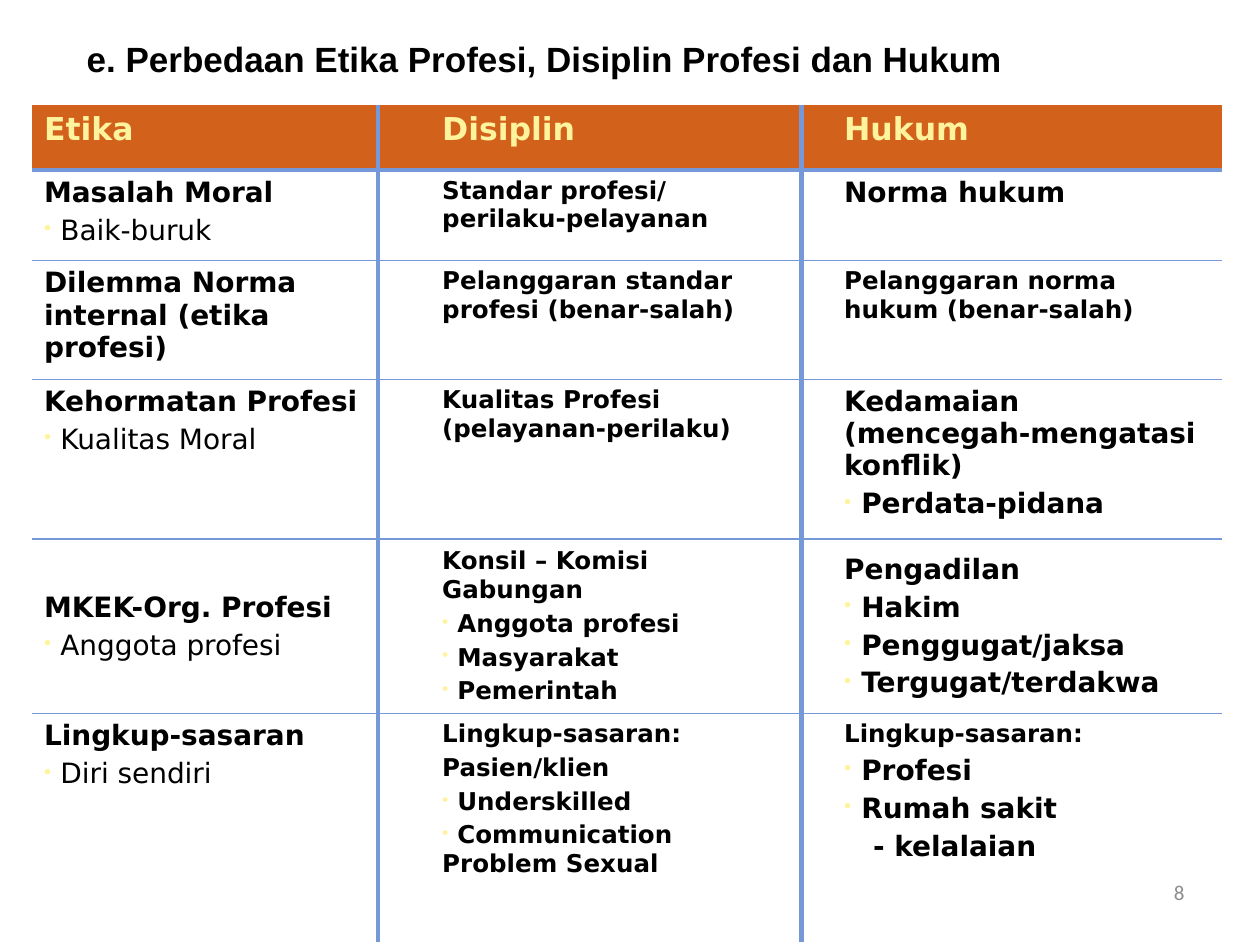
from collections import namedtuple

from lxml import etree
from pptx import Presentation
from pptx.dml.color import RGBColor
from pptx.enum.text import MSO_ANCHOR, PP_ALIGN
from pptx.oxml.ns import qn
from pptx.util import Inches, Pt

TOP, MIDDLE = MSO_ANCHOR.TOP, MSO_ANCHOR.MIDDLE
LEFT, RIGHT = PP_ALIGN.LEFT, PP_ALIGN.RIGHT

WIDTH, HEIGHT = 10, 7.5
BLACK, GREY = "000000", "8C8C8C"
ORANGE, YELLOW, BLUE = "D2611C", "FFF39D", "7598D9"
TABLE_FONT = "DejaVu Sans"

COLUMNS = [2.75, 0.41, 2.95, 0.24, 3.1]
ROWS = [0.52, 0.72, 0.94, 1.27, 1.38, 1.81]
TEXT_COLUMNS = (0, 2, 4)
RULED_COLUMNS = (0, 2)
RULE_WIDTHS = [3, 1, 0.5, 1, 1]
MIDDLE_ROW = 4

Line = namedtuple("Line", "text size bold bullet indent color",
                  defaults=(16, True, False, 0, BLACK))


def heading(text):
    return Line(text, size=18, color=YELLOW)


def small(text):
    return Line(text, size=14)


def item(text, size=16, bold=True):
    """A bulleted line, one space away from its bullet."""
    return Line(" " + text, size, bold, bullet=True)


CONTENT = [
    [[heading("Etika")], [heading("Disiplin")], [heading("Hukum")]],
    [[Line("Masalah Moral"), item("Baik-buruk", bold=False)],
     [small("Standar profesi/ perilaku-pelayanan")],
     [Line("Norma hukum")]],
    [[Line("Dilemma Norma internal (etika profesi)")],
     [small("Pelanggaran standar profesi (benar-salah)")],
     [small("Pelanggaran norma hukum (benar-salah)")]],
    [[Line("Kehormatan Profesi"), item("Kualitas Moral", bold=False)],
     [small("Kualitas Profesi (pelayanan-perilaku)")],
     [Line("Kedamaian (mencegah-mengatasi konflik)"), item("Perdata-pidana")]],
    [[Line("MKEK-Org. Profesi"), item("Anggota profesi", bold=False)],
     [small("Konsil – Komisi Gabungan"), item("Anggota profesi", 14),
      item("Masyarakat", 14), item("Pemerintah", 14)],
     [Line("Pengadilan"), item("Hakim"), item("Penggugat/jaksa"),
      item("Tergugat/terdakwa")]],
    [[Line("Lingkup-sasaran"), item("Diri sendiri", bold=False)],
     [small("Lingkup-sasaran:"), small("Pasien/klien"), item("Underskilled", 14),
      item("Communication Problem Sexual", 14)],
     [small("Lingkup-sasaran:"), item("Profesi"), item("Rumah sakit"),
      Line("- kelalaian", indent=0.23)]],
]


def rgb(value):
    return RGBColor.from_string(value)


def add_span(para, text, color, **font):
    span = para.add_run()
    span.text = text
    span.font.color.rgb = rgb(color)
    for name, value in font.items():
        setattr(span.font, name, value)


def add_text(page, area, text, color, align=LEFT, anchor=TOP, **font):
    box = page.shapes.add_textbox(*(Inches(length) for length in area))
    frame = box.text_frame
    frame.word_wrap = True
    frame.vertical_anchor = anchor
    para = frame.paragraphs[0]
    para.alignment = align
    add_span(para, text, color, **font)


def format_para(para, line):
    """Set the spacing, the indent and the bullet of a table line."""
    para.space_before = Pt(line.size * 0.2)
    props = para._p.get_or_add_pPr()
    props.set("marL", str(Inches(line.indent)))
    props.set("indent", "0")
    if line.bullet:
        color = etree.SubElement(props, qn("a:buClr"))
        etree.SubElement(color, qn("a:srgbClr"), val=YELLOW)
        etree.SubElement(props, qn("a:buSzPct"), val="75000")
        etree.SubElement(props, qn("a:buChar"), char="•")


def fill_cell(cell, lines):
    frame = cell.text_frame
    for index, line in enumerate(lines):
        para = frame.add_paragraph() if index else frame.paragraphs[0]
        format_para(para, line)
        add_span(para, line.text, line.color, name=TABLE_FONT,
                 size=Pt(line.size), bold=line.bold)


def set_borders(cell, widths):
    """Draw left, right, top and bottom borders; a width of 0 hides one."""
    props = cell._tc.get_or_add_tcPr()
    for side, width in zip("LRTB", widths):
        border = etree.SubElement(props, qn(f"a:ln{side}"), w=str(Pt(width)))
        if width:
            fill = etree.SubElement(border, qn("a:solidFill"))
            etree.SubElement(fill, qn("a:srgbClr"), val=BLUE)
        else:
            etree.SubElement(border, qn("a:noFill"))


def border_widths(row, column):
    rules = [0] + RULE_WIDTHS + [0]
    left = 3 if column - 1 in RULED_COLUMNS else 0
    right = 3 if column in RULED_COLUMNS else 0
    return left, right, rules[row], rules[row + 1]


def add_comparison(page):
    area = (0.25, 0.83, sum(COLUMNS), sum(ROWS))
    table = page.shapes.add_table(
        len(ROWS), len(COLUMNS), *(Inches(length) for length in area)).table
    table.first_row = table.horz_banding = False
    for column, width in zip(table.columns, COLUMNS):
        column.width = Inches(width)
    for r, height in enumerate(ROWS):
        table.rows[r].height = Inches(height)
        for c in range(len(COLUMNS)):
            cell = table.cell(r, c)
            set_borders(cell, border_widths(r, c))
            cell.vertical_anchor = MIDDLE if r == MIDDLE_ROW else TOP
            if r == 0:
                cell.fill.solid()
                cell.fill.fore_color.rgb = rgb(ORANGE)
            else:
                cell.fill.background()
        for c, lines in zip(TEXT_COLUMNS, CONTENT[r]):
            fill_cell(table.cell(r, c), lines)


def main():
    deck = Presentation()
    deck.slide_width, deck.slide_height = Inches(WIDTH), Inches(HEIGHT)
    page = deck.slides.add_slide(deck.slide_layouts[6])
    add_text(page, (7.17, 6.83, 2.33, 0.5), "8", GREY, RIGHT, MIDDLE,
             name="Calibri", size=Pt(12))
    add_text(page, (0.59, 0.25, 9.14, 0.44),
             "e. Perbedaan Etika Profesi, Disiplin Profesi dan Hukum", BLACK,
             name="Arial", size=Pt(20), bold=True)
    add_comparison(page)
    deck.save("out.pptx")


if __name__ == "__main__":
    main()
